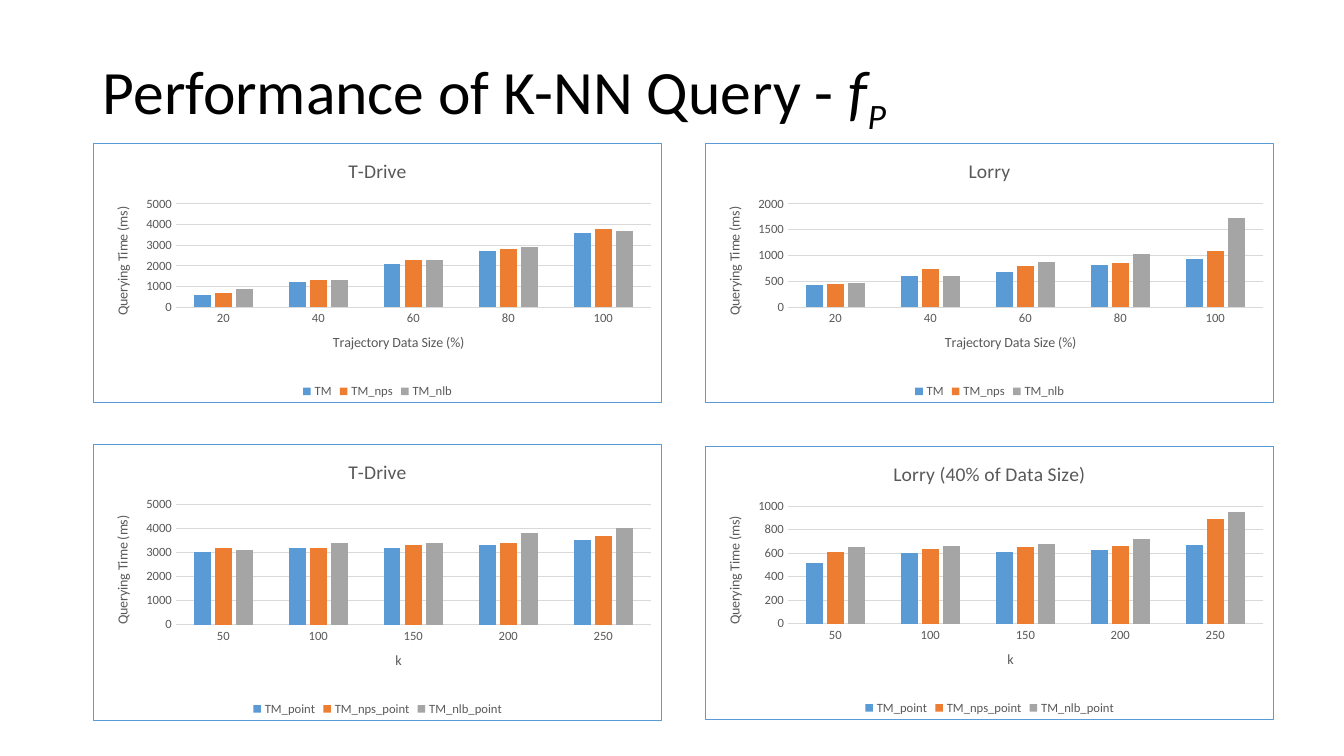
from dataclasses import dataclass

from lxml.etree import SubElement
from pptx import Presentation
from pptx.chart.axis import CategoryAxis, ValueAxis
from pptx.chart.chart import Chart
from pptx.chart.data import CategoryChartData
from pptx.dml.color import RGBColor
from pptx.enum.chart import XL_CHART_TYPE, XL_LEGEND_POSITION, XL_TICK_MARK
from pptx.enum.text import MSO_ANCHOR, MSO_AUTO_SIZE, PP_ALIGN
from pptx.oxml import parse_xml
from pptx.oxml.ns import nsdecls, qn
from pptx.slide import Slide
from pptx.text.text import Font, TextFrame
from pptx.util import Inches, Pt

FONT = "Calibri"
BLACK, GREY, PALE, BLUE = "000000", "595959", "D9D9D9", "5B9BD5"
SERIES_COLOURS = (BLUE, "ED7D31", "A5A5A5")
LEFT_COLUMN, RIGHT_COLUMN = 0.92, 6.99
CHART_WIDTH = 5.65
PLOT_LEFT, PLOT_RIGHT, PLOT_TOP, PLOT_BOTTOM = 0.82, 0.11, 0.6, 0.95

SIZES = ("20", "40", "60", "80", "100")
NEIGHBOURS = ("50", "100", "150", "200", "250")
METHODS = ("TM", "TM_nps", "TM_nlb")
POINT_METHODS = tuple(f"{method}_point" for method in METHODS)
SIZE_LABEL = "Trajectory Data Size (%)"


@dataclass(frozen=True)
class QueryChart:
    title: str
    left: float
    top: float
    height: float
    axis_label: str
    categories: tuple[str, ...]
    methods: tuple[str, ...]
    times: tuple[tuple[int, ...], ...]
    maximum: int
    step: int


CHARTS = (
    QueryChart("T-Drive", LEFT_COLUMN, 1.42, 2.58, SIZE_LABEL, SIZES, METHODS,
               ((600, 1200, 2100, 2700, 3600),
                (700, 1300, 2300, 2800, 3800),
                (900, 1300, 2300, 2900, 3700)), 5000, 1000),
    QueryChart("Lorry", RIGHT_COLUMN, 1.42, 2.58, SIZE_LABEL, SIZES, METHODS,
               ((430, 610, 690, 810, 940),
                (450, 740, 800, 860, 1080),
                (460, 600, 870, 1020, 1720)), 2000, 500),
    QueryChart("T-Drive", LEFT_COLUMN, 4.4, 2.75, "k", NEIGHBOURS, POINT_METHODS,
               ((3000, 3200, 3200, 3300, 3500),
                (3200, 3200, 3300, 3400, 3700),
                (3100, 3400, 3400, 3800, 4000)), 5000, 1000),
    QueryChart("Lorry (40% of Data Size)", RIGHT_COLUMN, 4.42, 2.72, "k", NEIGHBOURS, POINT_METHODS,
               ((520, 600, 610, 630, 670),
                (610, 640, 650, 660, 890),
                (650, 660, 680, 720, 950)), 1000, 200),
)


def colour(value: str) -> RGBColor:
    return RGBColor.from_string(value)


def style_font(font: Font, size: float, value: str) -> None:
    font.name = FONT
    font.size = Pt(size)
    font.bold = False
    font.color.rgb = colour(value)


def write_label(frame: TextFrame, text: str, size: float) -> None:
    frame.text = text
    style_font(frame.paragraphs[0].font, size, GREY)


def style_axis(axis: CategoryAxis | ValueAxis, label: str) -> None:
    write_label(axis.axis_title.text_frame, label, 10)
    style_font(axis.tick_labels.font, 9, GREY)
    axis.major_tick_mark = XL_TICK_MARK.NONE
    axis.minor_tick_mark = XL_TICK_MARK.NONE


def place_plot(chart: Chart, height: float) -> None:
    plot_area = chart.element.find(".//" + qn("c:plotArea"))
    layout = plot_area.find(qn("c:layout"))
    if layout is None:
        layout = parse_xml(f"<c:layout {nsdecls('c')}/>")
        plot_area.insert(0, layout)
    manual = SubElement(layout, qn("c:manualLayout"))
    settings = {
        "layoutTarget": "inner",
        "xMode": "edge",
        "yMode": "edge",
        "x": PLOT_LEFT / CHART_WIDTH,
        "y": PLOT_TOP / height,
        "w": 1 - (PLOT_LEFT + PLOT_RIGHT) / CHART_WIDTH,
        "h": 1 - (PLOT_TOP + PLOT_BOTTOM) / height,
    }
    for name, value in settings.items():
        SubElement(manual, qn(f"c:{name}")).set("val", str(value))


def add_border(chart: Chart) -> None:
    border = parse_xml(
        f'<c:spPr {nsdecls("c", "a")}><a:noFill/><a:ln w="{Pt(0.75)}"><a:solidFill>'
        f'<a:srgbClr val="{BLUE}"/></a:solidFill></a:ln></c:spPr>'
    )
    chart.element.find(qn("c:chart")).addnext(border)


def add_query_chart(page: Slide, query: QueryChart) -> None:
    data = CategoryChartData()
    data.categories = query.categories
    for method, times in zip(query.methods, query.times):
        data.add_series(method, times)
    chart = page.shapes.add_chart(
        XL_CHART_TYPE.COLUMN_CLUSTERED, Inches(query.left), Inches(query.top),
        Inches(CHART_WIDTH), Inches(query.height), data,
    ).chart
    style_font(chart.font, 10, BLACK)
    write_label(chart.chart_title.text_frame, query.title, 14)
    chart.has_legend = True
    chart.legend.position = XL_LEGEND_POSITION.BOTTOM
    chart.legend.include_in_layout = False
    style_font(chart.legend.font, 9, GREY)

    plot = chart.plots[0]
    plot.gap_width = 219
    plot.overlap = -27
    plot.vary_by_categories = False
    for series, value in zip(plot.series, SERIES_COLOURS):
        series.format.fill.solid()
        series.format.fill.fore_color.rgb = colour(value)

    style_axis(chart.category_axis, query.axis_label)
    style_axis(chart.value_axis, "Querying Time (ms)")
    chart.value_axis.minimum_scale = 0
    chart.value_axis.maximum_scale = query.maximum
    chart.value_axis.major_unit = query.step
    chart.value_axis.format.line.fill.background()
    for line in (chart.category_axis.format.line, chart.value_axis.major_gridlines.format.line):
        line.color.rgb = colour(PALE)
        line.width = Pt(0.75)
    place_plot(chart, query.height)
    add_border(chart)


def add_title(page: Slide) -> None:
    title = page.shapes.title
    title.left, title.top = Inches(0.92), Inches(0.4)
    title.width, title.height = Inches(11.5), Inches(1.02)
    frame = title.text_frame
    frame.vertical_anchor = MSO_ANCHOR.MIDDLE
    frame.auto_size = MSO_AUTO_SIZE.NONE
    para = frame.paragraphs[0]
    para.alignment = PP_ALIGN.LEFT
    para.line_spacing = 0.9
    style_font(para.font, 44, BLACK)
    para.add_run().text = "Performance of K-NN Query - "
    for symbol in ("f", "P"):
        span = para.add_run()
        span.text = symbol
        span.font.italic = True
    span.font._element.set("baseline", "-25000")


def main() -> None:
    deck = Presentation()
    deck.slide_width, deck.slide_height = Inches(13.33), Inches(7.5)
    page = deck.slides.add_slide(deck.slide_layouts[5])
    add_title(page)
    for query in CHARTS:
        add_query_chart(page, query)
    deck.save("out.pptx")


if __name__ == "__main__":
    main()
